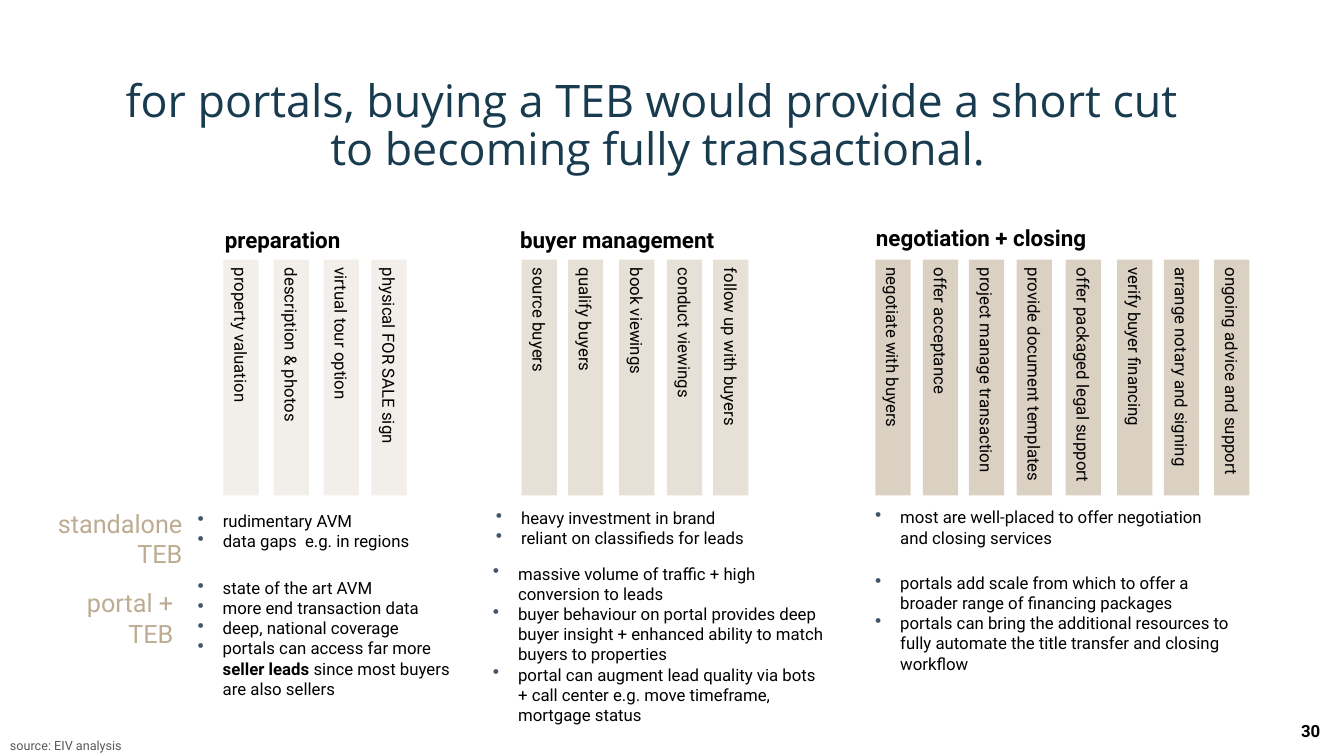
from dataclasses import dataclass
from lxml.etree import SubElement
from pptx import Presentation
from pptx.dml.color import RGBColor
from pptx.enum.shapes import MSO_SHAPE
from pptx.enum.text import MSO_ANCHOR, MSO_AUTO_SIZE, PP_ALIGN
from pptx.oxml.ns import qn
from pptx.text.text import TextFrame
from pptx.util import Pt

COLORS = {
    "title": "193B4F",
    "text": "000000",
    "bar": "DBD1C3",
    "label": "BDAC92",
    "bullet": "44546A",
    "source": "595959",
}
BAR_W, BAR_H, BAR_TOP = 25.2, 168.5, 185.4


@dataclass
class Style:
    size: float = 12
    color: str = "text"
    bold: bool = False
    font: str = "Roboto"
    align: PP_ALIGN = PP_ALIGN.LEFT
    anchor: MSO_ANCHOR = MSO_ANCHOR.TOP
    pad: tuple[float, float, float, float] = (0, 0, 0, 0)
    bullets: bool = False


@dataclass
class Box:
    left: float
    top: float
    width: float
    height: float
    lines: list[str]
    style: Style


@dataclass
class Stage:
    head: Box
    alpha: int
    bars: list[tuple[float, str]]


BODY = Style()
LIST = Style(bullets=True)
HEAD = Style(16, bold=True)
LABEL = Style(18, "label", align=PP_ALIGN.RIGHT)
TITLE = Style(32, "title", font="Open Sans", align=PP_ALIGN.CENTER, pad=(7.2,) * 4)
PAGE = Style(bold=True, anchor=MSO_ANCHOR.MIDDLE, pad=(7.2,) * 4)
SOURCE = Style(9, "source", pad=(7.2, 3.6, 7.2, 3.6))
BAR = Style(anchor=MSO_ANCHOR.MIDDLE, pad=(5.76, 0, 0, 0))

HEADLINE = Box(23, 49, 894.2, 60.5, [
    "for portals, buying a TEB would provide a short cut ",
    "to becoming fully transactional.",
], TITLE)

STAGES = [
    Stage(Box(160.6, 161.3, 126, 27, ["preparation"], HEAD), 34, [
        (159.5, "property valuation"),
        (195.5, "description & photos"),
        (231.2, "virtual tour option"),
        (265.3, "physical FOR SALE sign"),
    ]),
    Stage(Box(371.5, 161.3, 192, 21, ["buyer management"], HEAD), 67, [
        (372.6, "source buyers"),
        (405.7, "qualify buyers"),
        (442.2, "book viewings"),
        (476.3, "conduct viewings"),
        (509.4, "follow up with buyers"),
    ]),
    Stage(Box(625.7, 159.8, 226, 21, ["negotiation + closing"], HEAD), 100, [
        (625.2, "negotiate with buyers"),
        (659.2, "offer acceptance"),
        (692.1, "project manage transaction"),
        (726.2, "provide document templates"),
        (761.2, "offer packaged legal support"),
        (798, "verify buyer financing"),
        (831.4, "arrange notary and signing"),
        (867.2, "ongoing advice and support"),
    ]),
]

# Double asterisks enclose bold words.
TEXTS = [
    Box(0, 362.9, 130.3, 46, ["standalone", "TEB"], LABEL),
    Box(141.1, 365, 178.6, 29, ["rudimentary AVM", "data gaps  e.g. in regions"], LIST),
    Box(354.2, 362.9, 235.4, 29, [
        "heavy investment in brand",
        "reliant on classifieds for leads",
    ], LIST),
    Box(625, 362.2, 250.6, 44, [
        "most are well-placed to offer negotiation and closing services",
    ], LIST),
    Box(0, 419.8, 123.8, 46, ["portal +", "TEB"], LABEL),
    Box(141.1, 412.6, 192.2, 87, [
        "state of the art AVM",
        "more end transaction data",
        "deep, national coverage",
        "portals can access far more **seller leads **since most buyers are also sellers",
    ], LIST),
    Box(352.1, 402.5, 240.5, 116.6, [
        "massive volume of traffic + high conversion to leads",
        "buyer behaviour on portal provides deep buyer insight + enhanced ability "
        "to match buyers to properties",
        "portal can augment lead quality via bots + call center e.g. move timeframe, "
        "mortgage status",
    ], LIST),
    Box(625, 409, 267.8, 72.7, [
        "portals add scale from which to offer a broader range of financing packages",
        "portals can bring the additional resources to fully automate the title "
        "transfer and closing workflow",
    ], LIST),
    Box(922.3, 505.4, 37.4, 33.8, ["30"], PAGE),
    Box(0, 523.4, 778.3, 18, ["source: EIV analysis"], SOURCE),
]


def add_bullet(para) -> None:
    props = para._p.get_or_add_pPr()
    props.set("marL", str(Pt(18)))
    props.set("indent", str(Pt(-18)))
    color = SubElement(props, qn("a:buClr"))
    SubElement(color, qn("a:srgbClr"), val=COLORS["bullet"])
    SubElement(props, qn("a:buSzPct"), val="110000")
    SubElement(props, qn("a:buChar"), char="•")


def fill_text(frame: TextFrame, lines: list[str], style: Style) -> None:
    sides = ("margin_left", "margin_top", "margin_right", "margin_bottom")
    values = {side: Pt(pad) for side, pad in zip(sides, style.pad)}
    values |= {
        "word_wrap": True,
        "auto_size": MSO_AUTO_SIZE.NONE,
        "vertical_anchor": style.anchor,
    }
    for name, value in values.items():
        setattr(frame, name, value)
    for i, line in enumerate(lines):
        para = frame.add_paragraph() if i else frame.paragraphs[0]
        para.alignment = style.align
        if style.bullets:
            add_bullet(para)
        for j, part in enumerate(line.split("**")):
            run = para.add_run()
            run.text = part
            font = {
                "name": style.font,
                "size": Pt(style.size),
                "bold": style.bold or j % 2 == 1,
            }
            for name, value in font.items():
                setattr(run.font, name, value)
            run.font.color.rgb = RGBColor.from_string(COLORS[style.color])


def add_text(slide, box: Box) -> None:
    area = map(Pt, (box.left, box.top, box.width, box.height))
    fill_text(slide.shapes.add_textbox(*area).text_frame, box.lines, box.style)


def add_title(slide, box: Box) -> None:
    title = slide.shapes.title
    for name in ("left", "top", "width", "height"):
        setattr(title, name, Pt(getattr(box, name)))
    fill_text(title.text_frame, box.lines, box.style)


def add_bar(slide, left: float, text: str, alpha: int) -> None:
    """Draw a bar turned a quarter, so its text reads downwards."""
    shift = (BAR_H - BAR_W) / 2
    area = map(Pt, (left - shift, BAR_TOP + shift, BAR_H, BAR_W))
    bar = slide.shapes.add_shape(MSO_SHAPE.RECTANGLE, *area)
    bar.rotation = 90
    bar.shadow.inherit = False
    bar.line.fill.background()
    bar.fill.solid()
    bar.fill.fore_color.rgb = RGBColor.from_string(COLORS["bar"])
    if alpha < 100:
        color = bar._element.spPr.find(qn("a:solidFill"))[0]
        SubElement(color, qn("a:alpha"), val=str(alpha * 1000))
    fill_text(bar.text_frame, [text], BAR)


def main() -> None:
    deck = Presentation()
    deck.slide_width, deck.slide_height = Pt(960), Pt(540)
    slide = deck.slides.add_slide(deck.slide_layouts[5])
    add_title(slide, HEADLINE)
    for para in slide.shapes.title.text_frame.paragraphs:
        para.line_spacing = 0.9
    for stage in STAGES:
        add_text(slide, stage.head)
        for left, text in stage.bars:
            add_bar(slide, left, text, stage.alpha)
    for box in TEXTS:
        add_text(slide, box)
    deck.save("out.pptx")


if __name__ == "__main__":
    main()
